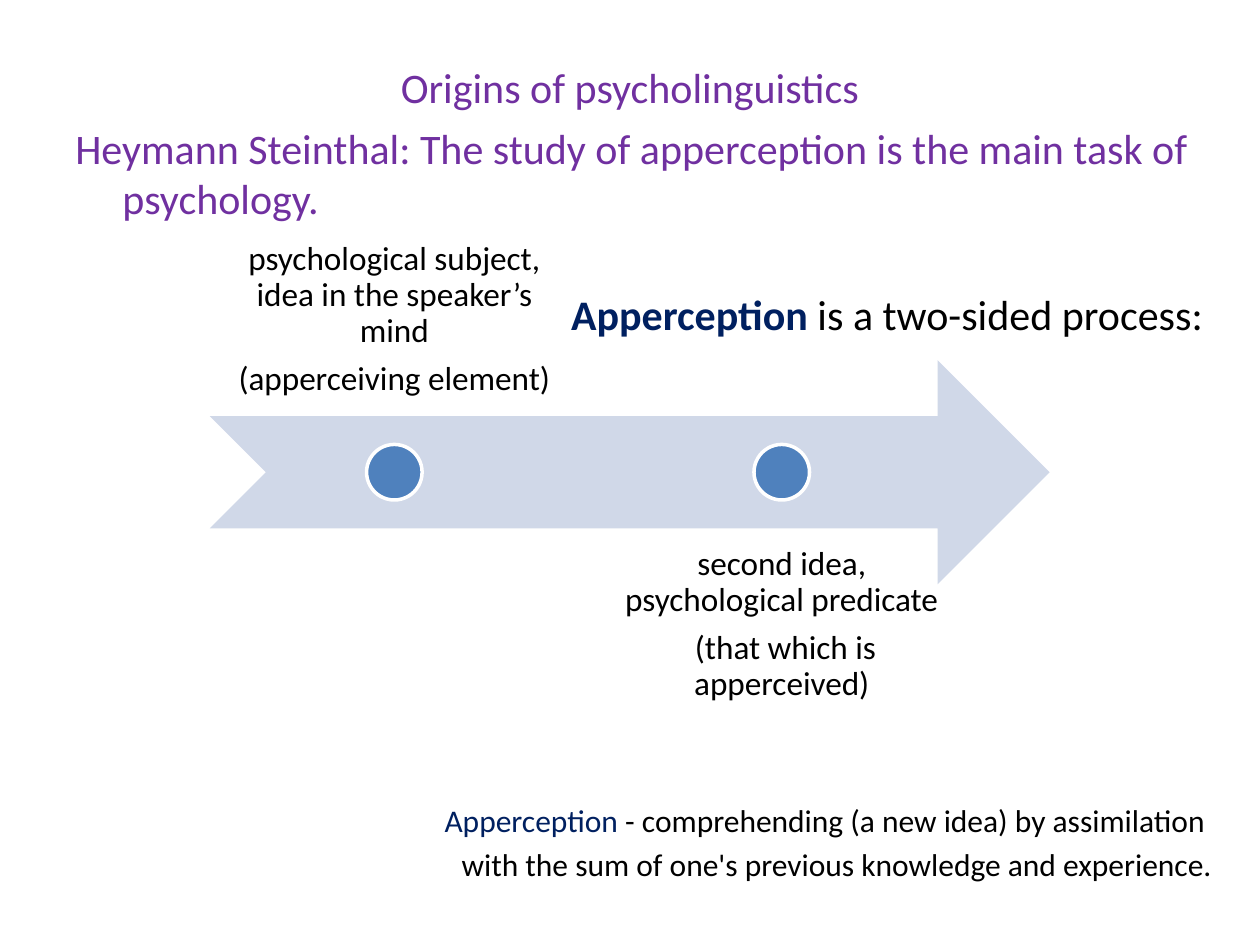
from pptx import Presentation
from pptx.dml.color import RGBColor
from pptx.enum.shapes import MSO_SHAPE
from pptx.enum.text import MSO_ANCHOR, PP_ALIGN
from pptx.util import Cm, Pt

PURPLE = RGBColor(0x70, 0x30, 0xA0)
NAVY = RGBColor(0x00, 0x20, 0x60)
BLACK = RGBColor(0, 0, 0)
WHITE = RGBColor(0xFF, 0xFF, 0xFF)
BLUE = RGBColor(0x4F, 0x81, 0xBD)
PALE_BLUE = RGBColor(0xD0, 0xD8, 0xE8)

TITLE = [[("Origins of psycholinguistics", PURPLE, False)]]
THESIS = [[("Heymann Steinthal: The study of apperception is the main task of psychology.", PURPLE, False)]]
PROCESS = [[("Apperception", NAVY, True), (" is a two-sided process: ", BLACK, False)]]
DEFINITION = [
    [("Apperception", NAVY, False), (" - comprehending (a new idea) by assimilation ", BLACK, False)],
    [("with the sum of one's previous knowledge and experience.", BLACK, False)],
]
STEPS = [
    ["psychological subject, idea in the speaker’s mind", "(apperceiving element)"],
    ["second idea, psychological predicate", " (that which is apperceived)"],
]

BODY_X, BODY_W = 1.27, 23.42
ARROW_X, ARROW_Y, ARROW_W, ARROW_H = 4.23, 7.26, 16.93, 4.52
STEP_W, STEP_PITCH, STEP_SHIFT = 7.44, 7.81, 0.75 * ARROW_H
DOT = 1.12


def add_text(s, paragraphs, x, y, w, h, size=24, align=PP_ALIGN.LEFT, anchor=MSO_ANCHOR.TOP,
             hanging=0, before=0, after=0, spacing=1.0, inset=None):
    tf = s.shapes.add_textbox(Cm(x), Cm(y), Cm(w), Cm(h)).text_frame
    tf.word_wrap = True
    tf.vertical_anchor = anchor
    if inset is not None:
        tf.margin_left = tf.margin_right = tf.margin_top = tf.margin_bottom = Cm(inset)
    for i, runs in enumerate(paragraphs):
        p = tf.add_paragraph() if i else tf.paragraphs[0]
        p.alignment = align
        p.line_spacing = spacing
        p.space_before = Pt(before if i else 0)
        p.space_after = Pt(after)
        if hanging:
            pPr = p._p.get_or_add_pPr()
            pPr.set("marL", str(Cm(hanging)))
            pPr.set("indent", str(-Cm(hanging)))
        for text, color, bold in runs:
            r = p.add_run()
            r.text = text
            r.font.name = "Calibri"
            r.font.size = Pt(size)
            r.font.bold = bold
            r.font.color.rgb = color


def add_figure(s, kind, x, y, w, h, fill, line=None):
    sp = s.shapes.add_shape(kind, Cm(x), Cm(y), Cm(w), Cm(h))
    sp.shadow.inherit = False
    sp.fill.solid()
    sp.fill.fore_color.rgb = fill
    if line is None:
        sp.line.fill.background()
    else:
        sp.line.color.rgb = line
        sp.line.width = Pt(2)


def add_timeline(s):
    add_figure(s, MSO_SHAPE.NOTCHED_RIGHT_ARROW, ARROW_X, ARROW_Y, ARROW_W, ARROW_H, PALE_BLUE)
    for i, lines in enumerate(STEPS):
        x = ARROW_X + i * STEP_PITCH
        y = ARROW_Y + (STEP_SHIFT if i else -STEP_SHIFT)
        add_text(s, [[(line, BLACK, False)] for line in lines], x, y, STEP_W, ARROW_H,
                 size=19, align=PP_ALIGN.CENTER, anchor=MSO_ANCHOR.TOP if i else MSO_ANCHOR.BOTTOM,
                 after=6.65, spacing=0.9, inset=0.38)
        add_figure(s, MSO_SHAPE.OVAL, x + (STEP_W - DOT) / 2, ARROW_Y + (ARROW_H - DOT) / 2,
                   DOT, DOT, BLUE, WHITE)


def main():
    prs = Presentation()
    prs.slide_width, prs.slide_height = Cm(25.4), Cm(19.05)
    s = prs.slides.add_slide(prs.slide_layouts[6])
    add_text(s, TITLE, BODY_X, 0.76, 22.86, 1.96, align=PP_ALIGN.CENTER, anchor=MSO_ANCHOR.MIDDLE)
    add_text(s, THESIS, BODY_X, 2.34, BODY_W, 2.4, hanging=0.95)
    add_text(s, PROCESS, BODY_X, 5.7, BODY_W, 1.3, align=PP_ALIGN.RIGHT)
    add_text(s, DEFINITION, BODY_X, 16.03, BODY_W, 2, size=18, align=PP_ALIGN.RIGHT, before=3.6)
    add_timeline(s)
    prs.save("out.pptx")


if __name__ == "__main__":
    main()
